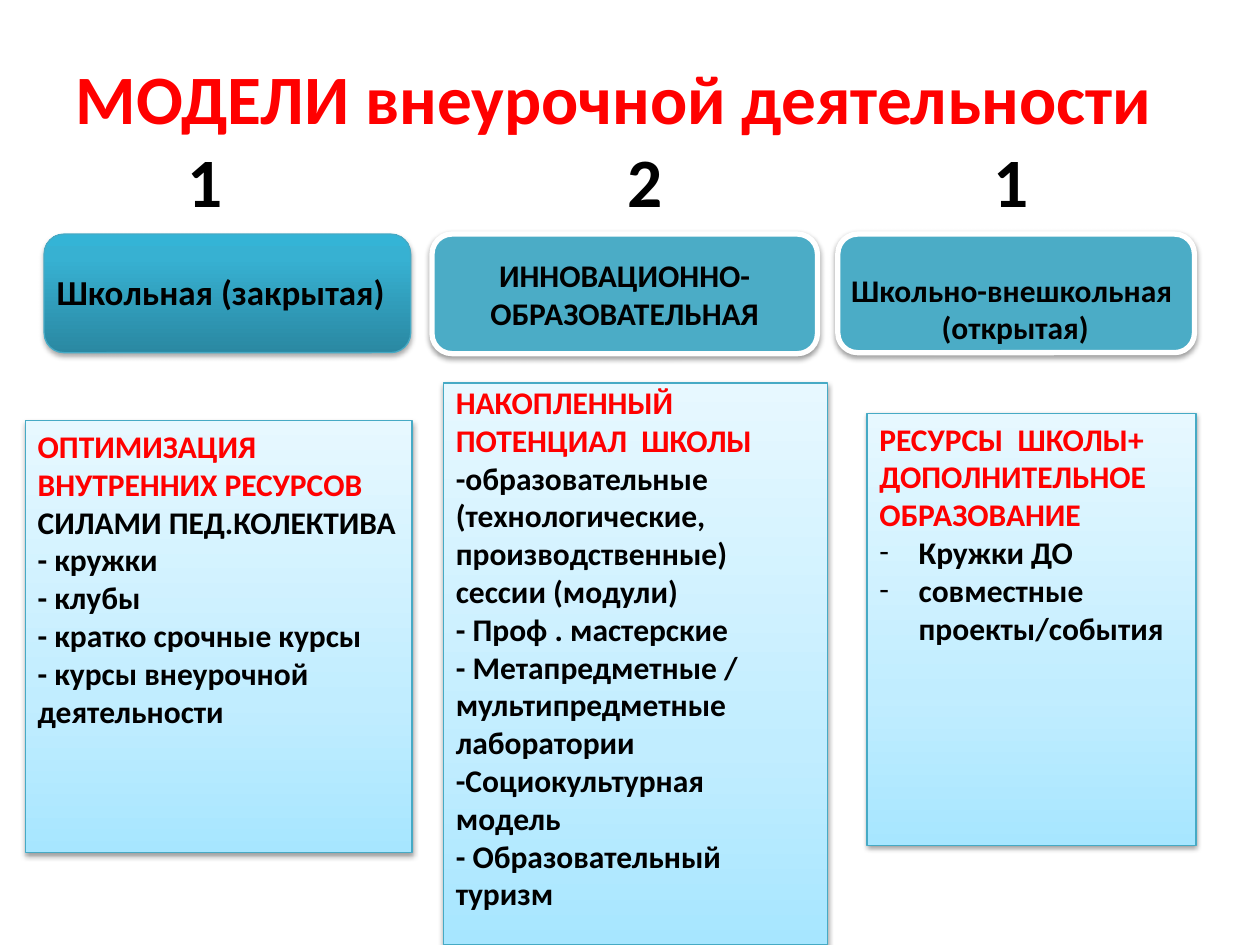
"""Build a slide that compares three models of extracurricular activity."""
from dataclasses import dataclass

from lxml import etree
from pptx import Presentation
from pptx import util as u
from pptx.dml.color import RGBColor
from pptx.enum import shapes, text
from pptx.oxml.ns import qn


@dataclass(frozen=True)
class Theme:
    """Colours, gradients and type sizes of the slide."""

    font: str = "Calibri"
    accent: str = "FF0000"
    ink: str = "000000"
    teal: str = "4BACC6"
    edge: str = "46AAC5"
    white: str = "FFFFFF"
    deep: tuple = ((0, "2A88A2"), (80, "37B1D2"), (100, "34B4D6"))
    pale: tuple = ((0, "A7E6FF"), (35, "C1EDFF"), (100, "E7F8FF"))
    title_size: float = 39.6
    label_size: int = 20
    body_size: int = 18


THEME = Theme()
NUMBER_TABS = (2.26, 11.12, 18.5)
DASH_INDENT = 0.79


def cm_box(box):
    """Turn left, top, width and height in centimetres into lengths."""
    return [u.Cm(value) for value in box]


def add_child(parent, tag, **attributes):
    """Append a drawing element with the given attributes."""
    child = etree.SubElement(parent, qn(tag))
    for name, value in attributes.items():
        child.set(name, str(value))
    return child


def style_font(font, size, color):
    """Set the bold slide font in a size and colour."""
    font.name, font.size, font.bold = THEME.font, u.Pt(size), True
    font.color.rgb = RGBColor.from_string(color)


def set_gradient(fill, stops):
    """Fill with a gradient that runs from bottom to top."""
    fill.gradient()
    fill.gradient_angle = 90
    stop_list = fill.gradient_stops[0]._gs.getparent()
    for old_stop in list(stop_list):
        stop_list.remove(old_stop)
    for position, color in stops:
        stop = add_child(stop_list, "a:gs", pos=position * 1000)
        add_child(stop, "a:srgbClr", val=color)


def add_shadow(panel, opacity, distance):
    """Give a panel a soft shadow that falls straight down."""
    panel.shadow.inherit = False
    effects = panel._element.spPr.find(qn("a:effectLst"))
    shadow = add_child(effects, "a:outerShdw", blurRad=u.Pt(3.1), dist=u.Pt(distance),
                       dir=90 * 60000, rotWithShape=0)
    color = add_child(shadow, "a:srgbClr", val=THEME.ink)
    add_child(color, "a:alpha", val=opacity * 1000)


def add_panel(slide, kind, box, fill, edge, edge_width, opacity=38, distance=1.6):
    """Add a shadowed panel with a plain or gradient fill."""
    panel = slide.shapes.add_shape(kind, *cm_box(box))
    if isinstance(fill, str):
        panel.fill.solid()
        panel.fill.fore_color.rgb = RGBColor.from_string(fill)
    else:
        set_gradient(panel.fill, fill)
    panel.line.color.rgb = RGBColor.from_string(edge)
    panel.line.width = u.Pt(edge_width)
    add_shadow(panel, opacity, distance)
    return panel


def write_label(frame, wording, size, align, anchor):
    """Write one paragraph in the ink colour."""
    frame.word_wrap = True
    frame.vertical_anchor = anchor
    label = frame.paragraphs[0]
    label.text, label.alignment = wording, align
    style_font(label.font, size, THEME.ink)


def add_label(slide, box, wording, size, align):
    """Add a free text label."""
    frame = slide.shapes.add_textbox(*cm_box(box)).text_frame
    write_label(frame, wording, size, align, text.MSO_ANCHOR.TOP)


def add_dash(paragraph):
    """Hang a paragraph on a dash bullet."""
    properties = paragraph._p.get_or_add_pPr()
    properties.set("marL", str(u.Cm(DASH_INDENT)))
    properties.set("indent", str(-u.Cm(DASH_INDENT)))
    add_child(properties, "a:buFont", typeface=THEME.font)
    add_child(properties, "a:buChar", char="-")


def add_details(slide, box, lead, items, dashed=False, top_inset=0.13):
    """Add a pale card with a red lead and its items."""
    card = add_panel(slide, shapes.MSO_SHAPE.RECTANGLE, box, THEME.pale, THEME.edge, 0.75)
    frame = card.text_frame
    frame.word_wrap = True
    frame.vertical_anchor = text.MSO_ANCHOR.TOP
    frame.margin_top = u.Cm(top_inset)
    for index, wording in enumerate([lead, *items]):
        paragraph = frame.add_paragraph() if index else frame.paragraphs[0]
        paragraph.text = wording
        paragraph.alignment = text.PP_ALIGN.LEFT
        if dashed and index:
            add_dash(paragraph)
        style_font(paragraph.font, THEME.body_size, THEME.ink if index else THEME.accent)


def write_title(title):
    """Write the heading and the column numbers below it."""
    title.left, title.top, title.width, title.height = cm_box((1.27, 1.19, 22.86, 3.18))
    frame = title.text_frame
    frame.word_wrap = True
    frame.auto_size = text.MSO_AUTO_SIZE.NONE
    frame.vertical_anchor = text.MSO_ANCHOR.MIDDLE
    heading = frame.paragraphs[0]
    heading.alignment = text.PP_ALIGN.LEFT
    tabs = add_child(heading._p.get_or_add_pPr(), "a:tabLst")
    for position in NUMBER_TABS:
        add_child(tabs, "a:tab", pos=u.Cm(position), algn="l")
    name = heading.add_run()
    name.text = "МОДЕЛИ внеурочной деятельности"
    heading.add_line_break()
    numbers = heading.add_run()
    numbers.text = "\t1\t2\t1"
    style_font(name.font, THEME.title_size, THEME.accent)
    style_font(numbers.font, THEME.title_size, THEME.ink)


def add_headers(slide):
    """Add the three rounded model names."""
    rounded = shapes.MSO_SHAPE.ROUNDED_RECTANGLE
    add_panel(slide, rounded, (0.89, 4.72, 7.39, 2.39), THEME.deep, THEME.edge, 0.75, 35, 1.8)
    add_panel(slide, rounded, (16.89, 4.72, 7.19, 2.39), THEME.teal, THEME.white, 3)
    add_label(slide, (0.89, 5.33, 7.39, 1.12), "Школьная (закрытая)",
              THEME.label_size, text.PP_ALIGN.LEFT)
    add_label(slide, (16.89, 5.33, 7.01, 1.8), "Школьно-внешкольная  (открытая)",
              THEME.body_size, text.PP_ALIGN.CENTER)
    innovation = add_panel(slide, rounded, (8.71, 4.72, 7.77, 2.41), THEME.teal, THEME.white, 3)
    write_label(innovation.text_frame, "ИННОВАЦИОННО-ОБРАЗОВАТЕЛЬНАЯ",
                THEME.body_size, text.PP_ALIGN.CENTER, text.MSO_ANCHOR.MIDDLE)


def main():
    """Build and save the slide."""
    deck = Presentation()
    deck.slide_width, deck.slide_height = u.Cm(25.4), u.Cm(19.05)
    slide = deck.slides.add_slide(deck.slide_layouts.get_by_name("Title Only"))
    write_title(slide.shapes.title)
    add_headers(slide)
    add_details(slide, (0.51, 8.48, 7.8, 8.71), "ОПТИМИЗАЦИЯ ВНУТРЕННИХ РЕСУРСОВ", [
        "СИЛАМИ ПЕД.КОЛЕКТИВА",
        "- кружки",
        "- клубы",
        "- кратко срочные курсы",
        "- курсы внеурочной деятельности",
    ])
    add_details(slide, (17.48, 8.33, 6.63, 8.71), "РЕСУРСЫ  ШКОЛЫ+ ДОПОЛНИТЕЛЬНОЕ ОБРАЗОВАНИЕ", [
        "Кружки ДО",
        "совместные  проекты/события",
    ], dashed=True)
    add_details(slide, (8.94, 7.72, 7.75, 11.33), "НАКОПЛЕННЫЙ ПОТЕНЦИАЛ  ШКОЛЫ", [
        "-образовательные  (технологические, производственные) сессии (модули)",
        "- Проф . мастерские",
        "- Метапредметные / мультипредметные лаборатории",
        "-Социокультурная модель",
        "- Образовательный туризм",
    ], top_inset=0)
    deck.save("out.pptx")


if __name__ == "__main__":
    main()
